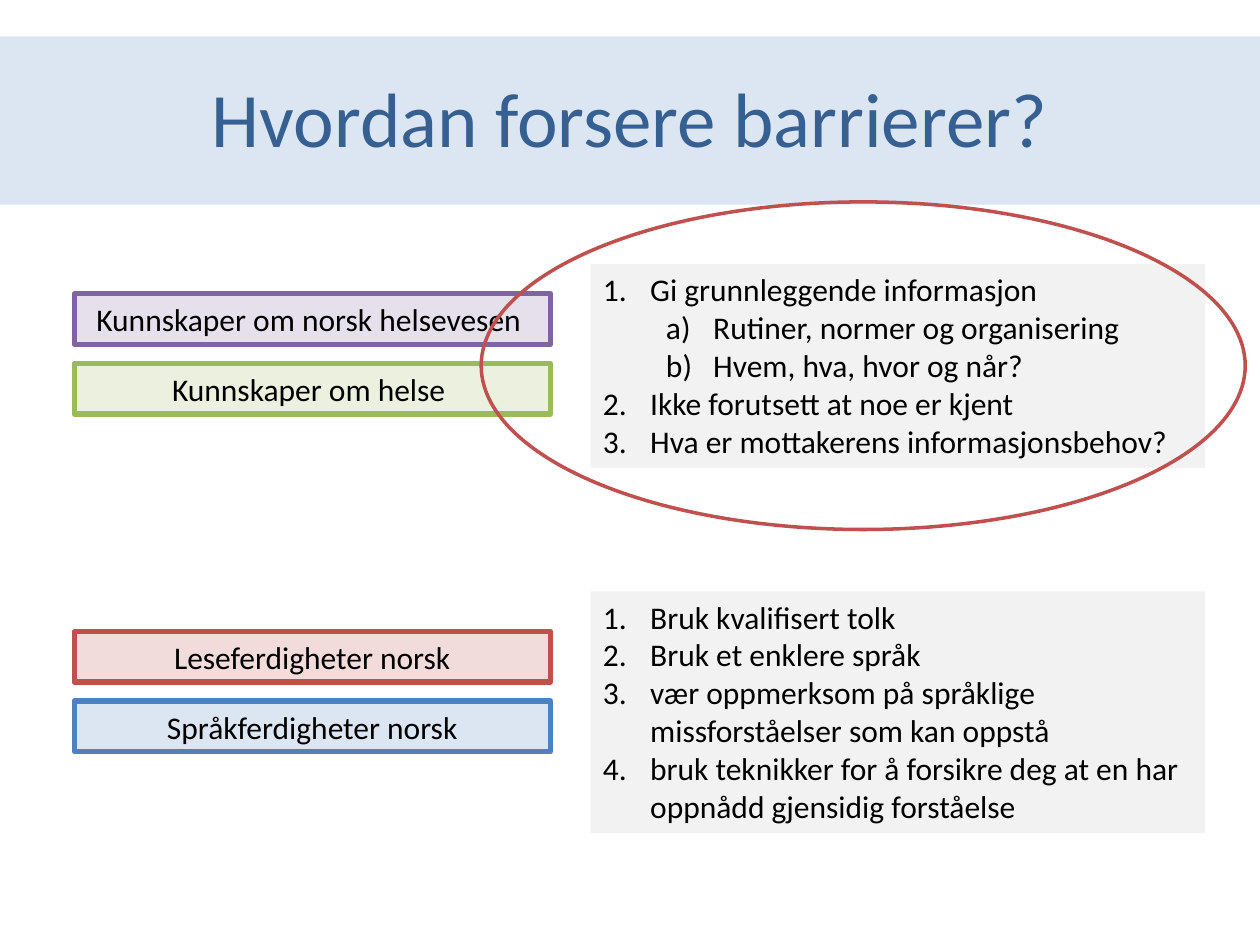
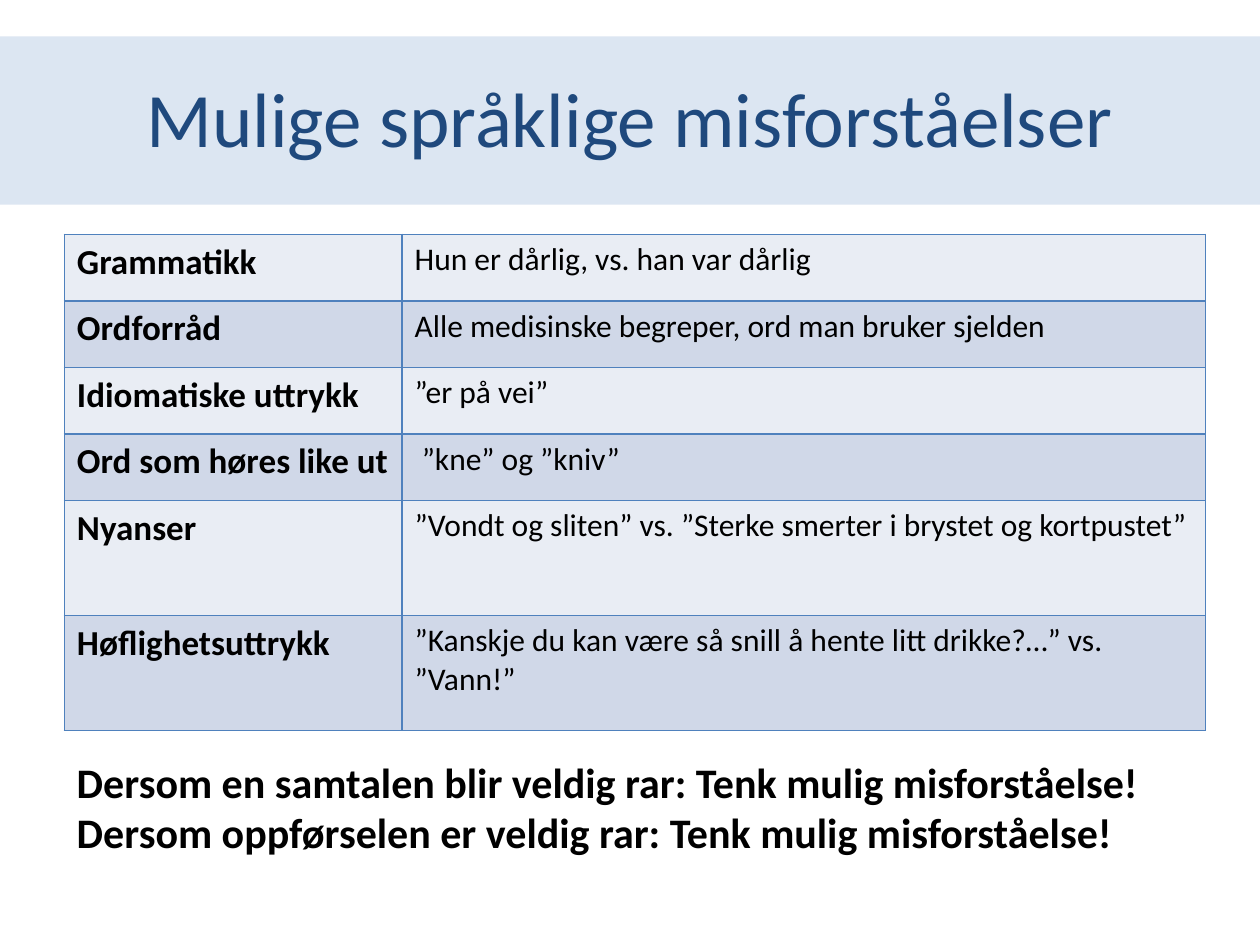
from pptx import Presentation
from pptx.dml.color import RGBColor as RGB
from pptx.enum.shapes import MSO_SHAPE as SHAPE
from pptx.enum.text import MSO_ANCHOR as ANCHOR, PP_ALIGN as ALIGN
from pptx.oxml.ns import qn
from pptx.util import Pt
from lxml.etree import SubElement

FONT = "Calibri"
PAGE_W, PAGE_H = 720, 540

BLACK = RGB(0x00, 0x00, 0x00)
BAND_BLUE = RGB(0xDC, 0xE6, 0xF2)
TITLE_BLUE = RGB(0x37, 0x60, 0x92)
TITLE_NAVY = RGB(0x1F, 0x49, 0x7D)
BLUE = RGB(0x4F, 0x81, 0xBD)
RED, PALE_RED = RGB(0xC0, 0x50, 0x4D), RGB(0xF2, 0xDC, 0xDB)
GREEN, PALE_GREEN = RGB(0x9B, 0xBB, 0x59), RGB(0xEB, 0xF1, 0xDE)
PURPLE, PALE_PURPLE = RGB(0x80, 0x64, 0xA2), RGB(0xE6, 0xE0, 0xEC)
PANEL_GREY = RGB(0xF2, 0xF2, 0xF2)
ROW_FILLS = (RGB(0xE9, 0xED, 0xF4), RGB(0xD0, 0xD8, 0xE8))

# Barriers: label, fill, outline
KNOWLEDGE = [
    ("Kunnskaper om norsk helsevesen ", PALE_PURPLE, PURPLE),
    ("Kunnskaper om helse ", PALE_GREEN, GREEN),
]
LANGUAGE = [
    ("Leseferdigheter norsk", PALE_RED, RED),
    ("Språkferdigheter norsk", BAND_BLUE, BLUE),
]
# Advice: level, text
INFORM = [
    (0, "Gi grunnleggende informasjon"),
    (1, "Rutiner, normer og organisering"),
    (1, "Hvem, hva, hvor og når?"),
    (0, "Ikke forutsett at noe er kjent"),
    (0, "Hva er mottakerens informasjonsbehov?"),
]
COMMUNICATE = [
    (0, "Bruk kvalifisert tolk"),
    (0, "Bruk et enklere språk"),
    (0, "vær oppmerksom på språklige missforståelser som kan oppstå"),
    (0, "bruk teknikker for å forsikre deg at en har oppnådd gjensidig forståelse"),
]
# Misunderstandings: kind, example, row height
EXAMPLES = [
    ("Grammatikk", "Hun er dårlig, vs. han var dårlig", 38),
    ("Ordforråd", "Alle medisinske begreper, ord man bruker sjelden", 38),
    ("Idiomatiske uttrykk", "”er på vei”", 38),
    ("Ord som høres like ut", " ”kne” og ”kniv”", 38),
    ("Nyanser", "”Vondt og sliten” vs. ”Sterke smerter i brystet og kortpustet”", 65.7),
    ("Høflighetsuttrykk",
     "”Kanskje du kan være så snill å hente litt drikke?…” vs. ”Vann!”", 65.7),
]
WARNINGS = [
    "Dersom en samtalen blir veldig rar: Tenk mulig misforståelse!",
    "Dersom oppførselen er veldig rar: Tenk mulig misforståelse!",
]


def add_span(para, text, size=18, color=BLACK, bold=False):
    span = para.add_run()
    span.text = text
    font = span.font
    font.name, font.size, font.bold = FONT, Pt(size), bold
    font.color.rgb = color


def next_para(frame, index):
    return frame.add_paragraph() if index else frame.paragraphs[0]


def add_block(page, kind, box, fill=None, line=None, line_width=1):
    shape = page.shapes.add_shape(kind, *map(Pt, box))
    shape.shadow.inherit = False
    if fill is None:
        shape.fill.background()
    else:
        shape.fill.solid()
        shape.fill.fore_color.rgb = fill
    if line is None:
        shape.line.fill.background()
    else:
        shape.line.color.rgb = line
        shape.line.width = Pt(line_width)
    return shape


def add_text_box(page, box, anchor=ANCHOR.TOP):
    frame = page.shapes.add_textbox(*map(Pt, box)).text_frame
    frame.word_wrap = True
    frame.vertical_anchor = anchor
    return frame


def add_title_band(page, text, color):
    top, height = 20.8, 96.2
    add_block(page, SHAPE.RECTANGLE, (0, top, PAGE_W, height), BAND_BLUE)
    frame = add_text_box(page, (36, top + 0.8, PAGE_W - 72, 90), ANCHOR.MIDDLE)
    para = frame.paragraphs[0]
    para.alignment = ALIGN.CENTER
    add_span(para, text, 44, color)


def number_para(para, level):
    """Number a paragraph 1. or a) with a hanging indent."""
    para.level = level
    props = para._p.get_or_add_pPr()
    props.set("marL", str(Pt(27 + 36 * level)))
    props.set("indent", str(Pt(-27)))
    scheme = ("arabicPeriod", "alphaLcParenR")[level]
    SubElement(props, qn("a:buFont"), typeface="+mj-lt")
    SubElement(props, qn("a:buAutoNum"), type=scheme)


def add_barriers(page, box, barriers):
    """Stack outlined labels from the top of the box."""
    left, top, width, height = box
    label_h = 29
    pitch = (height - label_h) / (len(barriers) - 1)
    for row, (text, fill, line) in enumerate(barriers):
        label = add_block(page, SHAPE.RECTANGLE,
                          (left, top + row * pitch, width, label_h), fill, line, 3)
        frame = label.text_frame
        frame.word_wrap = True
        para = frame.paragraphs[0]
        para.alignment = ALIGN.CENTER
        add_span(para, text)


def add_advice(page, box, items):
    frame = add_block(page, SHAPE.RECTANGLE, box, PANEL_GREY).text_frame
    frame.word_wrap = True
    frame.vertical_anchor = ANCHOR.TOP
    for index, (level, text) in enumerate(items):
        para = next_para(frame, index)
        para.alignment = ALIGN.LEFT
        number_para(para, level)
        add_span(para, text)


def set_borders(cell, color):
    props = cell._tc.get_or_add_tcPr()
    for index, side in enumerate(("lnL", "lnR", "lnT", "lnB")):
        border = props.makeelement(qn("a:" + side), {"w": str(Pt(1))})
        fill = SubElement(border, qn("a:solidFill"))
        SubElement(fill, qn("a:srgbClr"), val=str(color))
        props.insert(index, border)  # borders come before the fill


def add_examples(page, box):
    left, top, width = box
    kind_w = 193
    heights = [height for _, _, height in EXAMPLES]
    table = page.shapes.add_table(len(EXAMPLES), 2, Pt(left), Pt(top),
                                  Pt(width), Pt(sum(heights))).table
    table.first_row = False
    table.columns[0].width = Pt(kind_w)
    table.columns[1].width = Pt(width - kind_w)
    for row, (kind, example, height) in enumerate(EXAMPLES):
        table.rows[row].height = Pt(height)
        for col, (text, size) in enumerate(((kind, 20), (example, 18))):
            cell = table.cell(row, col)
            cell.fill.solid()
            cell.fill.fore_color.rgb = ROW_FILLS[row % 2]
            set_borders(cell, BLUE)
            add_span(cell.text_frame.paragraphs[0], text, size, bold=col == 0)


def add_warnings(page, box):
    frame = add_text_box(page, box)
    for index, text in enumerate(WARNINGS):
        add_span(next_para(frame, index), text, 24, bold=True)


def build_barriers_page(page):
    add_title_band(page, "Hvordan forsere barrierer?", TITLE_BLUE)
    # Barriers on the left, advice on the right
    label_x, label_w, pair_h = 42.5, 272, 68.8
    panel_x, panel_w = 337.5, 351.2
    add_barriers(page, (label_x, 167.8, label_w, pair_h), KNOWLEDGE)
    add_barriers(page, (label_x, 360.8, label_w, pair_h), LANGUAGE)
    add_advice(page, (panel_x, 151, panel_w, 116.4), INFORM)
    add_advice(page, (panel_x, 338, panel_w, 138), COMMUNICATE)
    # Ring around the first advice
    add_block(page, SHAPE.OVAL, (275, 115.4, 436.6, 187.2), line=RED, line_width=2)


def build_examples_page(page):
    add_title_band(page, "Mulige språklige misforståelser", TITLE_NAVY)
    left, width = 36.8, 652.2
    add_examples(page, (left, 134, width))
    add_warnings(page, (left, 428.5, width, 65.5))


def main():
    deck = Presentation()
    deck.slide_width, deck.slide_height = Pt(PAGE_W), Pt(PAGE_H)
    blank = deck.slide_layouts[6]
    for build in (build_barriers_page, build_examples_page):
        build(deck.slides.add_slide(blank))
    deck.save("out.pptx")


if __name__ == "__main__":
    main()
